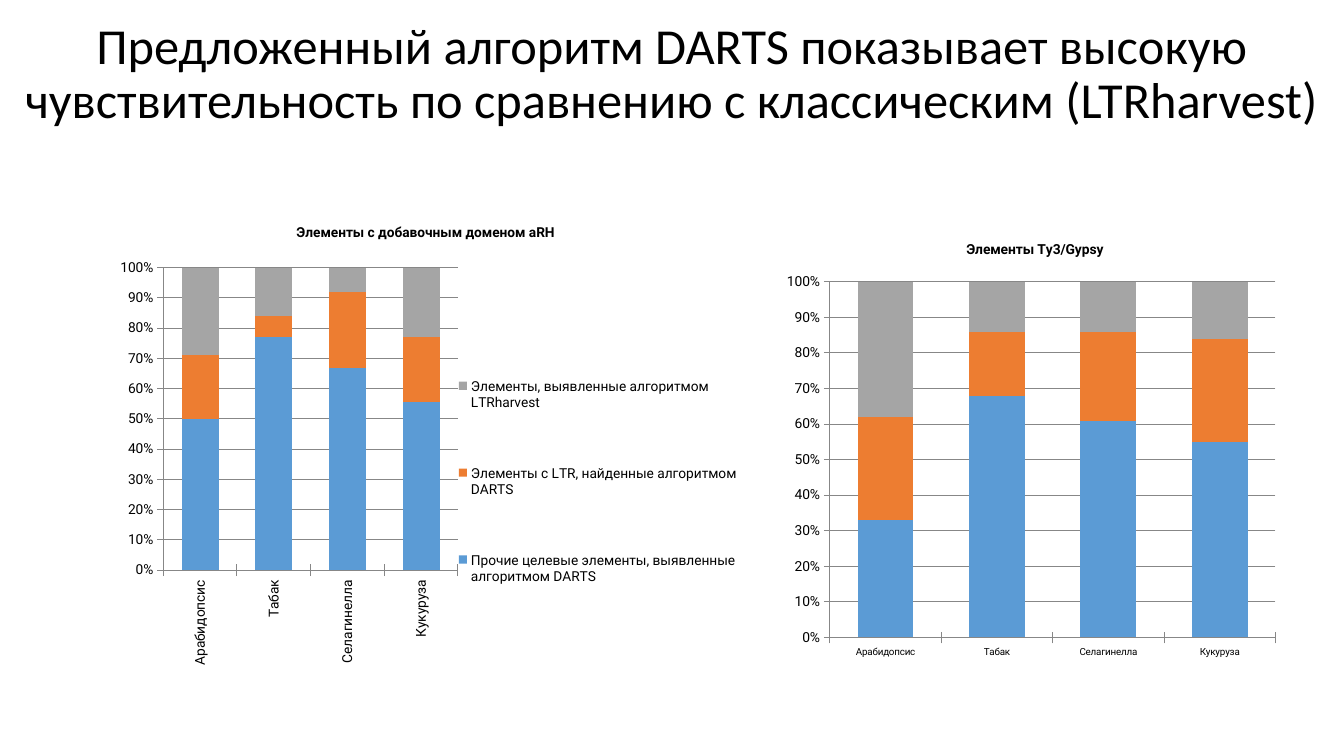
from pptx import Presentation
from pptx.chart.data import CategoryChartData
from pptx.dml.color import RGBColor
from pptx.enum.chart import XL_CHART_TYPE, XL_LEGEND_POSITION, XL_TICK_MARK
from pptx.enum.text import MSO_ANCHOR, PP_ALIGN
from pptx.oxml import parse_xml
from pptx.oxml.ns import nsdecls, qn
from pptx.util import Inches, Pt

STACKED = XL_CHART_TYPE.COLUMN_STACKED_100
LEGEND_RIGHT = XL_LEGEND_POSITION.RIGHT
CROSS = XL_TICK_MARK.CROSS
MIDDLE = MSO_ANCHOR.MIDDLE
CENTER = PP_ALIGN.CENTER

COLORS = {"text": "000000", "grid": "878787",
          "other": "5B9BD5", "ltr": "ED7D31", "harvest": "A5A5A5"}

SPECIES = ["Арабидопсис", "Табак", "Селагинелла", "Кукуруза"]
METHODS = {
    "other": "Прочие целевые элементы, выявленные алгоритмом DARTS",
    "ltr": "Элементы с LTR, найденные алгоритмом DARTS",
    "harvest": "Элементы, выявленные алгоритмом LTRharvest",
}
CHARTS = [
    {"title": "Элементы с добавочным доменом aRH", "size": 9.8, "species_size": 9.8,
     "at": (1, 2.04, 6.44, 4.68), "plot": (0.03, 0.115, 0.52, 0.86),
     "legend": (0.54, 0.25, 0.45, 0.67), "vertical": True,
     "shares": {"other": (50, 77, 67, 56), "ltr": (21, 7, 25, 22),
                "harvest": (29, 16, 8, 23)}},
    {"title": "Элементы Ty3/Gypsy", "size": 9.9, "species_size": 7,
     "at": (7.78, 2.22, 4.97, 4.33), "plot": (0.005, 0.115, 0.975, 0.88),
     "legend": None, "vertical": False,
     "shares": {"other": (33, 68, 61, 55), "ltr": (29, 18, 25, 29),
                "harvest": (38, 14, 14, 16)}},
]


def style_font(font, name, size, bold=False):
    font.name = name
    font.size = Pt(size)
    font.bold = bold
    font.color.rgb = RGBColor.from_string(COLORS["text"])


def place_part(part, index, box):
    """Fix a chart part at x, y, w, h, given as shares of the chart."""
    for old in part.findall(qn("c:layout")):
        part.remove(old)
    edges = "".join(f'<c:{key} val="{value}"/>' for key, value in zip("xywh", box))
    part.insert(index, parse_xml(
        f'<c:layout {nsdecls("c")}><c:manualLayout><c:xMode val="edge"/>'
        f'<c:yMode val="edge"/>{edges}</c:manualLayout></c:layout>'))


prs = Presentation()
prs.slide_width, prs.slide_height = Inches(13.33), Inches(7.5)
slide = prs.slides.add_slide(prs.slide_layouts[6])

# Heading
heading = slide.shapes.add_textbox(
    Inches(0), Inches(0.02), Inches(13.33), Inches(1.45)).text_frame
heading.word_wrap = True
heading.vertical_anchor = MIDDLE
paragraph = heading.paragraphs[0]
paragraph.alignment = CENTER
paragraph.line_spacing = 0.9
run = paragraph.add_run()
run.text = ("Предложенный алгоритм DARTS показывает высокую "
            "чувствительность по сравнению с классическим (LTRharvest)")
style_font(run.font, "Calibri", 36)

# Charts
for item in CHARTS:
    data = CategoryChartData()
    data.categories = SPECIES
    for method, name in METHODS.items():
        data.add_series(name, item["shares"][method])
    chart = slide.shapes.add_chart(
        STACKED, *(Inches(length) for length in item["at"]), data).chart
    style_font(chart.font, "Roboto", item["size"])

    # Chart title
    title_run = chart.chart_title.text_frame.paragraphs[0].add_run()
    title_run.text = item["title"]
    style_font(title_run.font, "Roboto", item["size"], bold=True)
    chart.chart_title.include_in_layout = False

    # Columns
    columns = chart.plots[0]
    columns.gap_width = 100
    columns.overlap = 100
    columns.vary_by_categories = False
    for method, series in zip(METHODS, columns.series):
        series.format.fill.solid()
        series.format.fill.fore_color.rgb = RGBColor.from_string(COLORS[method])

    # Axes and gridlines
    species_axis, share_axis = chart.category_axis, chart.value_axis
    share_axis.has_major_gridlines = True
    share_axis.major_unit = 0.1
    share_axis.tick_labels.number_format = "0%"
    share_axis.tick_labels.number_format_is_linked = False
    for axis in (species_axis, share_axis):
        axis.major_tick_mark = CROSS
    for ruled in (species_axis, share_axis, share_axis.major_gridlines):
        ruled.format.line.width = Pt(0.75)
        ruled.format.line.color.rgb = RGBColor.from_string(COLORS["grid"])
    style_font(species_axis.tick_labels.font, "Roboto", item["species_size"])
    if item["vertical"]:
        label_body = species_axis._element.find(qn("c:txPr")).find(qn("a:bodyPr"))
        label_body.set("rot", "-5400000")
        label_body.set("vert", "horz")

    # Plot area and legend
    place_part(chart._chartSpace.chart.plotArea, 0, item["plot"])
    chart.has_legend = item["legend"] is not None
    if chart.has_legend:
        chart.legend.position = LEGEND_RIGHT
        chart.legend.include_in_layout = False
        style_font(chart.legend.font, "Roboto", item["size"])
        place_part(chart.legend._element, 1, item["legend"])

prs.save("out.pptx")
